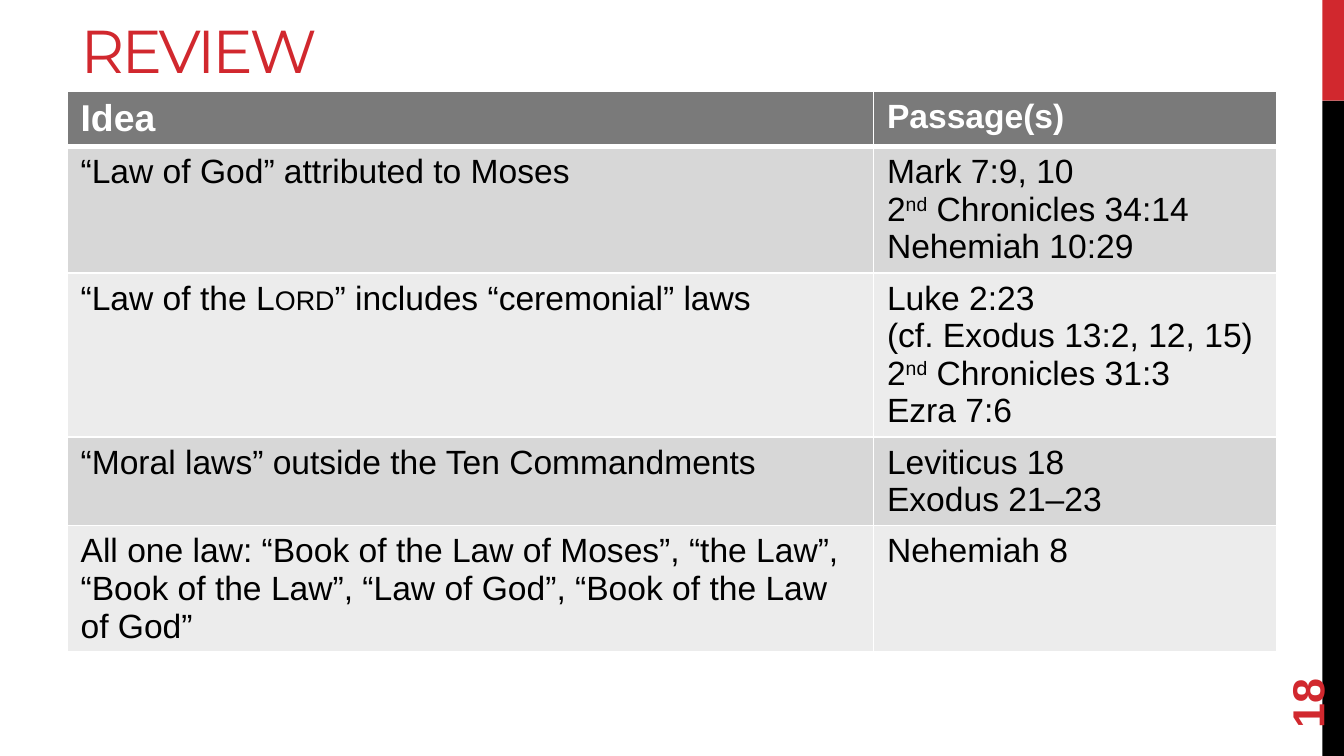
from dataclasses import dataclass

from lxml.etree import SubElement
from pptx import Presentation
from pptx.dml.color import RGBColor as Rgb
from pptx.enum.shapes import MSO_SHAPE as Shape
from pptx.enum.text import MSO_ANCHOR as Anchor, MSO_AUTO_SIZE as AutoSize, PP_ALIGN as Align
from pptx.oxml.ns import qn
from pptx.util import Inches, Pt

SLIDE_WIDTH = 10
SLIDE_HEIGHT = SLIDE_WIDTH * 9 / 16
ACCENT_HEIGHT = 0.75


@dataclass(frozen=True)
class Theme:
    accent: str = "D1282E"
    black: str = "000000"
    white: str = "FFFFFF"
    header: str = "7A7A7A"
    bands: tuple = ("D7D7D7", "ECECEC")
    heading_font: str = "Montserrat"
    body_font: str = "Arial"
    title_size: float = 32.4
    number_size: float = 24
    lead_size: float = 20
    body_size: float = 18


ORDINAL = ("nd", {"baseline": "30000"})
HEADINGS = ("Idea", "Passage(s)")
REVIEW = [
    (["“Law of God” attributed to Moses"],
     ["Mark 7:9, 10", ["2", ORDINAL, " Chronicles 34:14"], "Nehemiah 10:29"]),
    ([["“Law of the ", ("Lord", {"cap": "small"}), "” includes “ceremonial” laws"]],
     ["Luke 2:23", "(cf. Exodus 13:2, 12, 15)", ["2", ORDINAL, " Chronicles 31:3"], "Ezra 7:6"]),
    (["“Moral laws” outside the Ten Commandments"],
     ["Leviticus 18", "Exodus 21–23"]),
    (["All one law: “Book of the Law of Moses”, “the Law”, “Book of the Law”, "
      "“Law of God”, “Book of the Law of God”"],
     ["Nehemiah 8"]),
]


def write(frame, lines, *, font, size, color, bold=False, **attributes):
    """Fill a frame; a line is a string or a list of strings and (string, run attributes)."""
    frame.word_wrap = True
    for index, line in enumerate(lines):
        paragraph = frame.add_paragraph() if index else frame.paragraphs[0]
        paragraph.alignment = Align.LEFT
        for piece in [line] if isinstance(line, str) else line:
            words, extra = (piece, {}) if isinstance(piece, str) else piece
            run = paragraph.add_run()
            run.text = words
            run.font.name, run.font.size, run.font.bold = font, Pt(size), bold
            run.font.color.rgb = Rgb.from_string(color)
            for name, value in {**attributes, **extra}.items():
                run.font._element.set(name, value)


def border(cell, color, **widths):
    """Draw cell edges, given in schema order: lnL, lnR, lnT, lnB."""
    properties = cell._tc.get_or_add_tcPr()
    for position, (edge, width) in enumerate(widths.items()):
        line = SubElement(properties, qn(f"a:{edge}"), w=str(Pt(width)))
        fill = SubElement(line, qn("a:solidFill"))
        SubElement(fill, qn("a:srgbClr"), val=color)
        properties.insert(position, line)


class SlideBuilder:
    def __init__(self, slide, theme):
        self.slide, self.theme = slide, theme

    def bar(self, top, height, color):
        bar = self.slide.shapes.add_shape(
            Shape.RECTANGLE, Inches(9.84), Inches(top), Inches(0.16), Inches(height))
        bar.shadow.inherit = False
        bar.fill.solid()
        bar.fill.fore_color.rgb = Rgb.from_string(color)
        bar.line.fill.background()

    def title(self, words):
        title = self.slide.shapes.title
        title.left, title.top = Inches(0.5), Inches(0.07)
        title.width, title.height = Inches(9), Inches(0.6)
        title.text_frame.auto_size = AutoSize.NONE
        title.text_frame.vertical_anchor = Anchor.MIDDLE
        write(title.text_frame, [words], font=self.theme.heading_font,
              size=self.theme.title_size, color=self.theme.accent, spc="-150")

    def cell(self, cell, lines, fill, top=1, bottom=1, **text_format):
        cell.fill.solid()
        cell.fill.fore_color.rgb = Rgb.from_string(fill)
        border(cell, self.theme.white, lnL=1, lnR=1, lnT=top, lnB=bottom)
        write(cell.text_frame, lines, font=self.theme.body_font, **text_format)

    def review_table(self, headings, rows):
        theme = self.theme
        row_count = len(rows) + 1
        table = self.slide.shapes.add_table(
            row_count, 2, Inches(0.5), Inches(0.68), Inches(9), Inches(0.41 * row_count)).table
        table.columns[0].width, table.columns[1].width = Inches(6), Inches(3)
        for column, heading in enumerate(headings):
            self.cell(table.cell(0, column), [heading], theme.header, bottom=3,
                      size=theme.body_size if column else theme.lead_size,
                      color=theme.white, bold=True)
        for row, contents in enumerate(rows):
            for column, lines in enumerate(contents):
                self.cell(table.cell(row + 1, column), lines, theme.bands[row % 2],
                          top=1 if row else 3, size=theme.body_size, color=theme.black)

    def page_number(self, number):
        box = self.slide.shapes.add_textbox(
            Inches(9.18), Inches(4.78), Inches(1.08), Inches(0.4))
        box.rotation = 270
        box.text_frame.vertical_anchor = Anchor.MIDDLE
        write(box.text_frame, [number], font=self.theme.body_font,
              size=self.theme.number_size, color=self.theme.accent, bold=True)


def main():
    deck = Presentation()
    deck.slide_width, deck.slide_height = Inches(SLIDE_WIDTH), Inches(SLIDE_HEIGHT)
    theme = Theme()
    title_only = deck.slide_layouts[5]
    builder = SlideBuilder(deck.slides.add_slide(title_only), theme)
    builder.bar(0, ACCENT_HEIGHT, theme.accent)
    builder.bar(ACCENT_HEIGHT, SLIDE_HEIGHT - ACCENT_HEIGHT, theme.black)
    builder.title("REVIEW")
    builder.review_table(HEADINGS, REVIEW)
    builder.page_number("18")
    deck.save("out.pptx")


if __name__ == "__main__":
    main()
